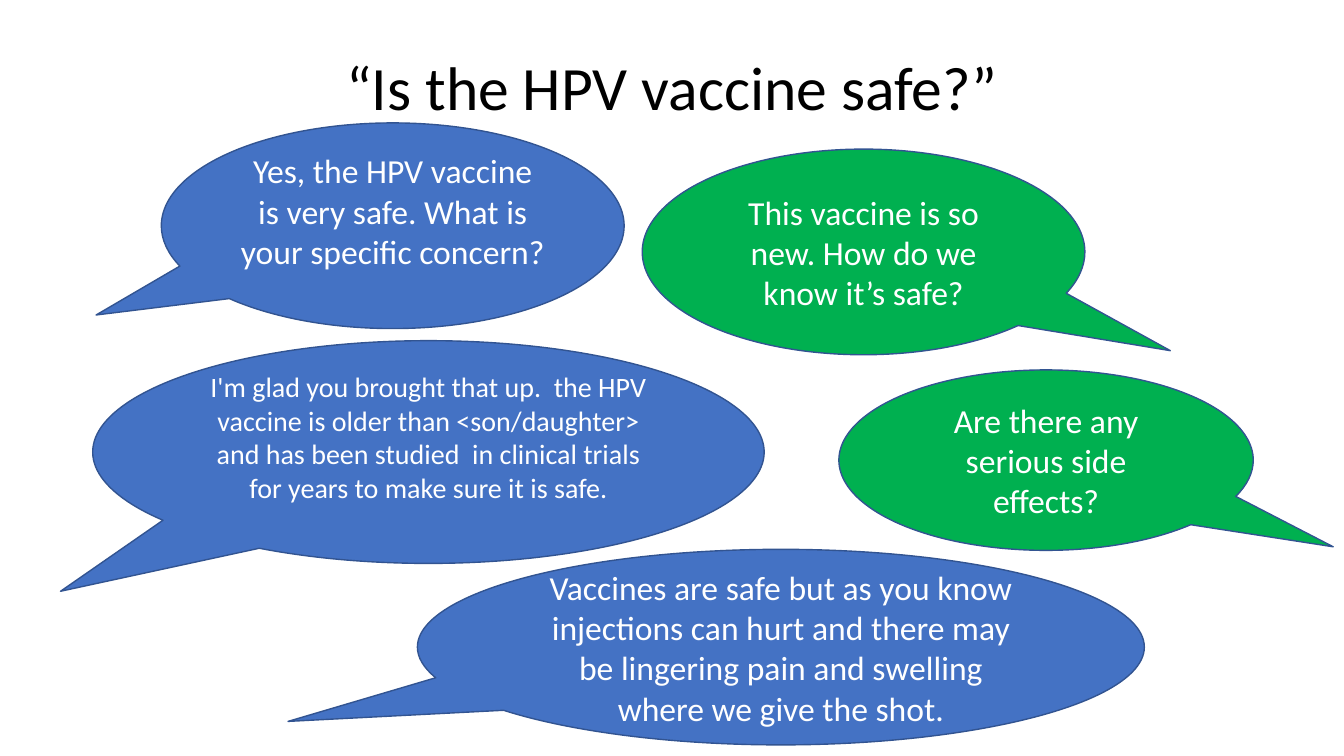
from pptx import Presentation
from pptx.dml.color import RGBColor
from pptx.enum.shapes import MSO_SHAPE
from pptx.enum.text import MSO_ANCHOR, PP_ALIGN
from pptx.util import Inches, Pt

CALLOUT = MSO_SHAPE.OVAL_CALLOUT
MIDDLE = MSO_ANCHOR.MIDDLE
CENTER = PP_ALIGN.CENTER
BLACK = RGBColor(0x00, 0x00, 0x00)
WHITE = RGBColor(0xFF, 0xFF, 0xFF)
PROVIDER_BLUE = RGBColor(0x44, 0x72, 0xC4)
PARENT_GREEN = RGBColor(0x00, 0xB0, 0x50)
OUTLINE = RGBColor(0x32, 0x54, 0x91)
FONT = "Calibri"

# speech, box, tail tip, fill, text size, bottom inset
BUBBLES = [
    ("Yes, the HPV vaccine is very safe. What is your specific concern?",
     (1.6, 1.22, 4.59, 2.04), (-0.641, 0.434), PROVIDER_BLUE, 24, 0.35),
    ("This vaccine is so new. How do we know it’s safe?",
     (6.37, 1.48, 4.39, 2.04), (0.693, 0.48), PARENT_GREEN, 24, 0.05),
    ("I'm glad you brought that up.  the HPV vaccine is older than "
     "<son/daughter> and has been studied  in clinical trials for years "
     "to make sure it is safe.",
     (0.92, 3.38, 6.66, 2.21), (-0.548, 0.625), PROVIDER_BLUE, 20, 0.35),
    ("Are there any serious side effects?",
     (8.32, 3.67, 4.11, 1.79), (0.693, 0.48), PARENT_GREEN, 24, 0.05),
    ("Vaccines are safe but as you know injections can hurt and there may "
     "be lingering pain and swelling where we give the shot.",
     (4.14, 5.45, 7.21, 1.94), (-0.678, 0.38), PROVIDER_BLUE, 24, 0.05),
]


def write_centred(frame, words, size, color):
    """Set one centred paragraph in the given text frame."""
    frame.text = words
    frame.word_wrap = True
    frame.vertical_anchor = MIDDLE
    paragraph = frame.paragraphs[0]
    paragraph.alignment = CENTER
    font = paragraph.runs[0].font
    font.name, font.size, font.color.rgb = FONT, Pt(size), color


def add_question(slide, box):
    """Place the parent's opening question in the title placeholder."""
    question = slide.shapes.title
    question.left, question.top, question.width, question.height = map(Inches, box)
    write_centred(question.text_frame, "“Is the HPV vaccine safe?”", 44, BLACK)
    question.text_frame.paragraphs[0].line_spacing = 0.9


def add_bubble(slide, speech, box, tail, fill, size, bottom_inset):
    """Draw one speech bubble with its tail and words."""
    bubble = slide.shapes.add_shape(CALLOUT, *map(Inches, box))
    bubble.adjustments[0], bubble.adjustments[1] = tail
    bubble.shadow.inherit = False
    bubble.fill.solid()
    bubble.fill.fore_color.rgb = fill
    bubble.line.color.rgb = OUTLINE
    bubble.line.width = Pt(1)
    write_centred(bubble.text_frame, speech, size, WHITE)
    bubble.text_frame.margin_bottom = Inches(bottom_inset)


def main():
    """Build and save the conversation slide."""
    deck = Presentation()
    deck.slide_width, deck.slide_height = Inches(13.33), Inches(7.5)
    slide = deck.slides.add_slide(deck.slide_layouts[5])
    add_question(slide, (0.92, 0.4, 11.5, 1))
    for bubble in BUBBLES:
        add_bubble(slide, *bubble)
    deck.save("out.pptx")


if __name__ == "__main__":
    main()
